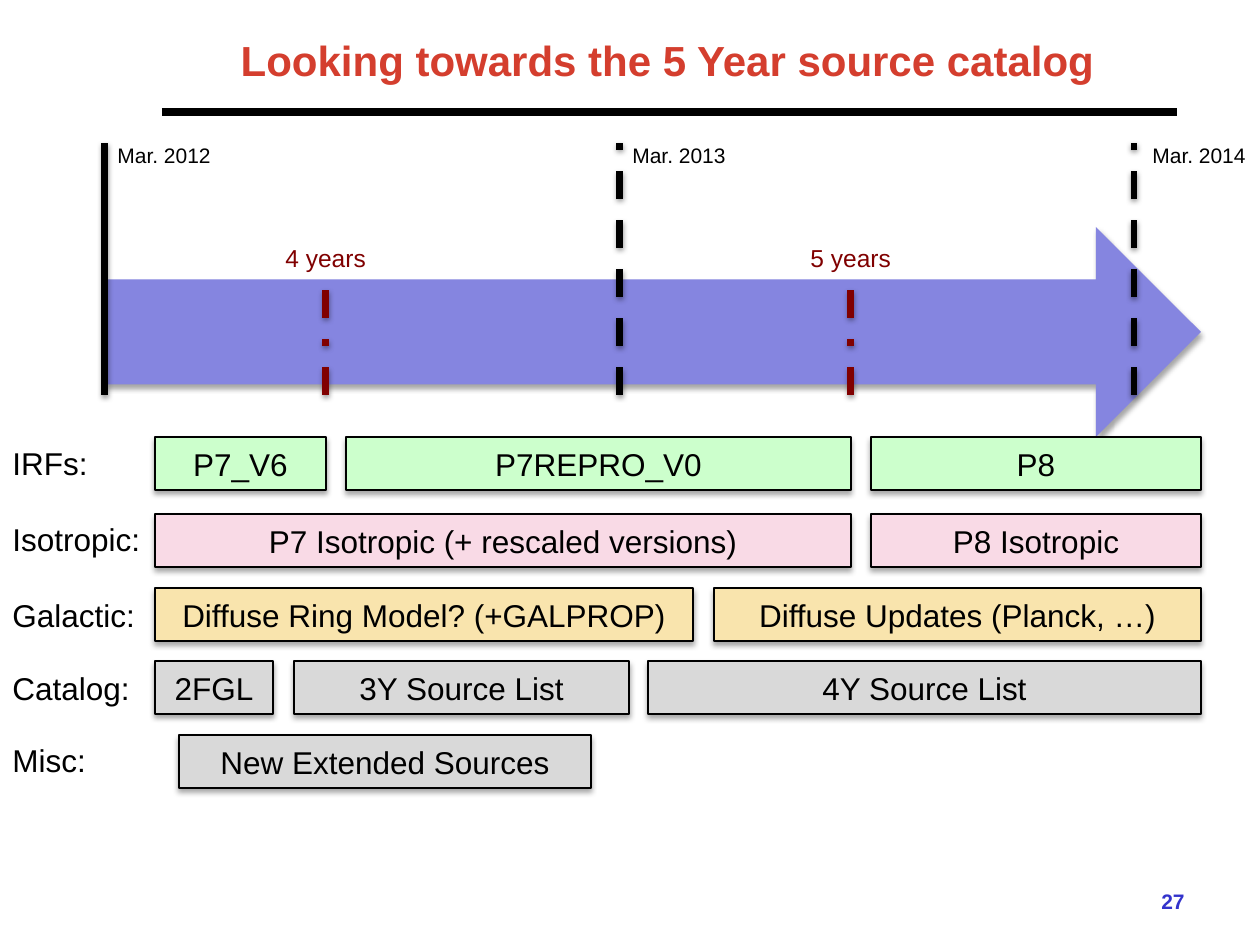
"""Build the timeline slide for the 5 year source catalog."""
from lxml import etree
from pptx import Presentation, util as u
from pptx.dml.color import RGBColor
from pptx.enum import dml, shapes, text
from pptx.oxml.ns import qn

BLACK = RGBColor(0x00, 0x00, 0x00)
RED = RGBColor(0xD4, 0x3E, 0x2E)
MAROON = RGBColor(0x80, 0x00, 0x00)
BLUE = RGBColor(0x33, 0x33, 0xCC)
VIOLET = RGBColor(0x85, 0x85, 0xE0)
GREEN = RGBColor(0xCC, 0xFF, 0xCC)
PINK = RGBColor(0xF9, 0xDA, 0xE6)
GOLD = RGBColor(0xF9, 0xE4, 0xAD)
GREY = RGBColor(0xD9, 0xD9, 0xD9)

DASH = dml.MSO_LINE.DASH
DOT = dml.MSO_LINE.DASH_DOT
TITLE = "Looking towards the 5 Year source catalog"
PAGE = "27"

MARKS = [
    ("Mar. 2012", 105, 105, None),
    ("Mar. 2013", 620, 620, DASH),
    ("Mar. 2014", 1134, 1140, DASH),
]
YEARS = [("4 years", 326), ("5 years", 851)]
ROWS = [
    ("IRFs:", 437, 438, 101, GREEN,
     [("P7_V6", 155, 326), ("P7REPRO_V0", 346, 851), ("P8", 871, 1201)]),
    ("Isotropic:", 514, 514, 155, PINK,
     [("P7 Isotropic (+ rescaled versions)", 155, 851),
      ("P8 Isotropic", 871, 1201)]),
    ("Galactic:", 588, 590, 149, GOLD,
     [("Diffuse Ring Model? (+GALPROP)", 155, 693),
      ("Diffuse Updates (Planck, …)", 714, 1201)]),
    ("Catalog:", 661, 663, 144, GREY,
     [("2FGL", 155, 273), ("3Y Source List", 294, 629),
      ("4Y Source List", 648, 1201)]),
    ("Misc:", 735, 735, 100, GREY, [("New Extended Sources", 179, 591)]),
]
BAR = 53
FOOT = 395


def px(n):
    return round(n * 914400 / 126)


def shade(shape, alpha=0, dist=0):
    list_ = etree.SubElement(shape._element.spPr, qn("a:effectLst"))
    if alpha:
        drop = etree.SubElement(list_, qn("a:outerShdw"), blurRad=str(u.Pt(3.1)),
                                dist=str(u.Pt(dist)), dir="5400000", rotWithShape="0")
        tone = etree.SubElement(drop, qn("a:srgbClr"), val=str(BLACK))
        etree.SubElement(tone, qn("a:alpha"), val=str(alpha * 1000))


def write(shape, words, size, color, align=text.PP_ALIGN.LEFT, bold=False):
    frame = shape.text_frame
    frame.text = words
    para = frame.paragraphs[0]
    para.alignment = align
    font = para.runs[0].font
    font.name, font.size, font.bold = "Arial", u.Pt(size), bold
    font.color.rgb = color
    return frame


def label(slide, words, x, y, w, h, size, color):
    box = slide.shapes.add_textbox(px(x), px(y), px(w), px(h))
    frame = write(box, words, size, color)
    frame.word_wrap = False
    frame.auto_size = text.MSO_AUTO_SIZE.SHAPE_TO_FIT_TEXT


def line(slide, x, y, x2, y2, color, width, dash=None, alpha=38):
    rule = slide.shapes.add_connector(
        shapes.MSO_CONNECTOR.STRAIGHT, px(x), px(y), px(x2), px(y2))
    rule.line.color.rgb = color
    rule.line.width = u.Pt(width)
    if dash:
        rule.line.dash_style = dash
    shade(rule, alpha, 1.6)


def block(slide, kind, x, y, w, h, color, edge=None):
    shape = slide.shapes.add_shape(kind, px(x), px(y), px(w), px(h))
    shape.fill.solid()
    shape.fill.fore_color.rgb = color
    if edge:
        shape.line.color.rgb = edge
        shape.line.width = u.Pt(0.75)
    else:
        shape.line.fill.background()
    shade(shape, 35, 1.8)
    return shape


def main():
    deck = Presentation()
    deck.slide_width, deck.slide_height = px(1260), px(945)
    slide = deck.slides.add_slide(deck.slide_layouts[5])
    center = text.PP_ALIGN.CENTER
    middle = text.MSO_ANCHOR.MIDDLE

    title = slide.shapes.title
    title.left, title.top, title.width, title.height = px(156), px(14), px(1023), px(91)
    frame = write(title, TITLE, 24, RED, center, True)
    frame.vertical_anchor = middle
    line(slide, 162, 112, 1177, 112, BLACK, 4.5, alpha=0)

    block(slide, shapes.MSO_SHAPE.RIGHT_ARROW, 106, 227, 1095, 210, VIOLET)
    for words, x, left, dash in MARKS:
        line(slide, x, FOOT, x, 143, BLACK, 4, dash)
        label(slide, words, left, 136, 120, 38, 12, BLACK)
    for words, x in YEARS:
        line(slide, x, FOOT, x, 275, MAROON, 4, DOT)
        label(slide, words, x - 53, 237, 107, 43, 14, MAROON)

    for name, top, base, wide, color, bars in ROWS:
        label(slide, name, 0, base, wide, 50, 18, BLACK)
        for words, x, end in bars:
            bar = block(slide, shapes.MSO_SHAPE.RECTANGLE, x, top, end - x, BAR, color, BLACK)
            frame = write(bar, words, 18, BLACK, center)
            frame.vertical_anchor = middle

    page = slide.shapes.add_textbox(px(903), px(876), px(294), px(50))
    frame = write(page, PAGE, 12, BLUE, text.PP_ALIGN.RIGHT, True)
    frame.word_wrap = True
    frame.vertical_anchor = middle
    deck.save("out.pptx")


if __name__ == "__main__":
    main()
